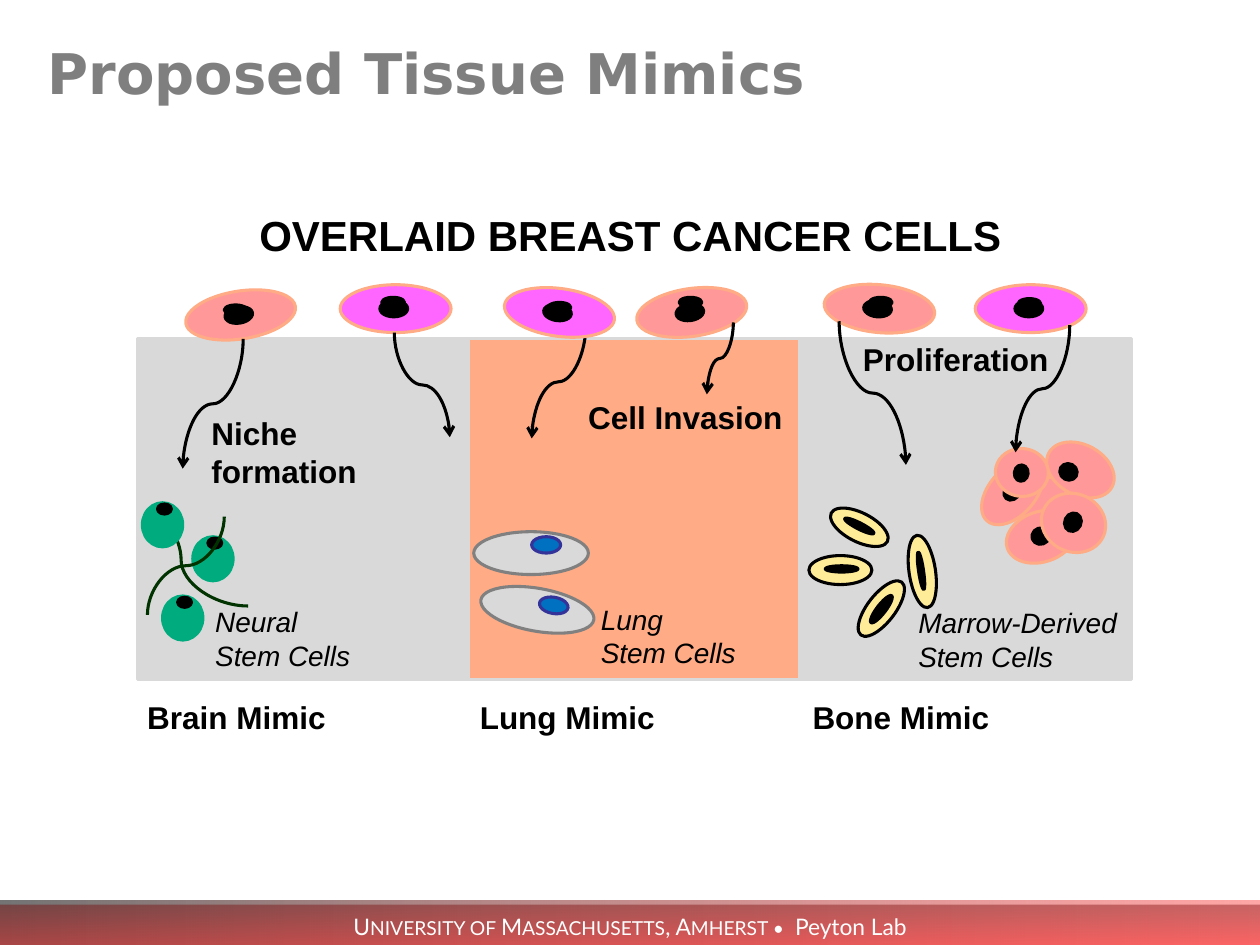
from lxml import etree
from pptx import Presentation
from pptx import util as u
from pptx.dml.color import RGBColor
from pptx.enum import shapes, text
from pptx.oxml.ns import qn

HUES = {
    "black": "000000", "white": "FFFFFF", "grey": "D9D9D9", "rim": "808080",
    "title": "7F7F7F", "peach": "FFAB85", "rose": "FF9999", "pink": "FF66FF",
    "cream": "FFEC99", "green": "00AB7E", "fibre": "003300", "blue": "0070C0",
    "navy": "333399", "red": "FF0000", "wine": "760000",
}
COLS, ROWS = 100, 75


def hue(name):
    return RGBColor.from_string(HUES[name])


class Board:
    font = "Arial"
    stroke = u.Pt(1.75)

    def __init__(self, deck):
        self.unit = deck.slide_width / COLS
        self.slide = deck.slides.add_slide(deck.slide_layouts[6])

    def span(self, *cells):
        return [u.Emu(round(c * self.unit)) for c in cells]

    def shape(self, kind, box, fill=None, line=None, turn=0):
        item = self.slide.shapes.add_shape(kind, *self.span(*box))
        item.shadow.inherit = False
        item.rotation = turn
        if fill:
            item.fill.solid()
            item.fill.fore_color.rgb = hue(fill)
        if line:
            item.line.color.rgb = hue(line)
            item.line.width = self.stroke
        else:
            item.line.fill.background()
        return item

    def panel(self, box, fill):
        self.shape(shapes.MSO_SHAPE.RECTANGLE, box, fill, "grey")

    def oval(self, box, fill, line, turn=0):
        self.shape(shapes.MSO_SHAPE.OVAL, box, fill, line, turn)

    def cell(self, box, core, fill, line, turn=0, ink="black", edge="black"):
        self.oval(box, fill, line, turn)
        x, y = box[:2]
        dx, dy, w, h = core
        self.oval((x + dx, y + dy, w, h), ink, edge, turn)

    def band(self, box, stops, angle):
        item = self.shape(shapes.MSO_SHAPE.RECTANGLE, box)
        item.fill.gradient()
        item.fill.gradient_angle = angle
        for stop, (name, share) in zip(item.fill.gradient_stops, stops):
            stop.color.rgb = hue(name)
        marks = item.element.spPr.findall(".//" + qn("a:srgbClr"))
        for mark, (name, share) in zip(marks, stops):
            etree.SubElement(mark, qn("a:alpha")).set("val", str(share * 1000))
        return item

    def curve(self, start, end, color, upright=True, head=False, bend=None):
        (x1, y1), (x2, y2) = start, end
        turn = 0
        if upright:
            side = 1 if x2 < x1 else -1
            cx, cy = (x1 + x2) / 2, (y1 + y2) / 2
            half, drop = side * (y2 - y1) / 2, side * (x1 - x2) / 2
            x1, y1, x2, y2 = cx - half, cy - drop, cx + half, cy + drop
            turn = 90 if side > 0 else 270
        item = self.slide.shapes.add_connector(
            shapes.MSO_CONNECTOR.CURVE, *self.span(x1, y1, x2, y2))
        item.line.color.rgb = hue(color)
        item.line.width = self.stroke
        props = item.element.spPr
        props.find(qn("a:xfrm")).set("rot", str(turn * 60000))
        if bend:
            guide = etree.SubElement(props.find(".//" + qn("a:avLst")), qn("a:gd"))
            guide.set("name", "adj1")
            guide.set("fmla", f"val {bend}")
        if head:
            etree.SubElement(props.find(qn("a:ln")), qn("a:tailEnd")).set("type", "arrow")
        etree.SubElement(props, qn("a:effectLst"))

    def label(self, box, words, size=18, bold=True, slant=False,
              color="black", font=None, anchor=text.MSO_ANCHOR.TOP):
        frame = self.slide.shapes.add_textbox(*self.span(*box)).text_frame
        frame.word_wrap = True
        frame.vertical_anchor = anchor
        frame.text = words
        for para in frame.paragraphs:
            style = para.font
            style.name = font or self.font
            style.size = u.Pt(size)
            style.bold, style.italic = bold, slant
            style.color.rgb = hue(color)

    def footer(self, box, runs):
        item = self.band(box, [("wine", 40), ("red", 40)], 270)
        frame = item.text_frame
        frame.vertical_anchor = text.MSO_ANCHOR.MIDDLE
        para = frame.paragraphs[0]
        para.alignment = text.PP_ALIGN.CENTER
        para.font.name = "Lato"
        para.font.color.rgb = hue("white")
        for words, size in runs:
            run = para.add_run()
            run.text = words
            run.font.size = u.Pt(size)


def main():
    deck = Presentation()
    deck.slide_width, deck.slide_height = u.Inches(10), u.Inches(7.5)
    board = Board(deck)

    board.band((0, 71.5, COLS, 3.5), [("black", 55), ("red", 35)], 0)
    board.footer((0, 71.8, COLS, 3.4), [
        ("U", 13), ("NIVERSITY OF ", 11), ("M", 13), ("ASSACHUSETTS", 11),
        (", A", 13), ("MHERST • ", 11), (" Peyton Lab", 13)])
    board.label((2.8, 0.8, 95.4, 8.1), "Proposed Tissue Mimics", 32,
                color="title", font="DejaVu Sans", anchor=text.MSO_ANCHOR.BOTTOM)

    for i, (organ, fill) in enumerate(
            [("Brain", "grey"), ("Lung", "peach"), ("Bone", "grey")]):
        left = 10.9 + 26.3 * i
        board.label((10.7 + 26.4 * i, 54.9, 18.5, 4), organ + " Mimic")
        board.panel((left, 26.9, 26.3, 27), fill)

    def cancer(x, y, fill, turn, spot):
        board.cell((x, y, 8.8, 3.8), (3.15, 1.25, 2.2, 1.3), fill, "peach", turn)
        board.oval((*spot, 1.8, 0.8), "black", "black")

    for spec_row in [
        (50.5, 22.9, "rose", 351.9, (53.9, 23.6)),
        (14.7, 23.1, "rose", 351.2, (17.8, 24.2)),
        (27, 22.6, "pink", 0, (30.3, 23.6)),
        (65.4, 22.6, "rose", 5.4, (69, 23.6)),
        (77.4, 22.6, "pink", 0, (80.8, 23.7)),
    ]:
        cancer(*spec_row)

    board.oval((80.6, 37.9, 5.7, 4), "rose", "peach", 5.4)
    for box, core, turn in [
        ((77.3, 37.2, 6.1, 3.7), (2.3, 1.2, 1.5, 1.2), 311.3),
        ((79.8, 40.6, 5.7, 4), (2.1, 1.3, 1.4, 1.3), 341.4),
        ((82.9, 35.3, 5.7, 4), (1.2, 1.5, 1.4, 1.3), 28.4),
        ((82.6, 39.2, 5.2, 4.6), (1.9, 1.5, 1.3, 1.5), 24.9),
        ((79, 35.6, 4.2, 3.8), (1.5, 1.3, 1.1, 1.3), 5.4),
    ]:
        board.cell(box, core, "rose", "peach", turn)

    for start, end in [
        ((19.3, 26.9), (14.5, 37.2)), ((31.3, 26.4), (35.7, 34.7)),
        ((58.2, 25.6), (56.1, 31.3)), ((46.5, 25.8), (42.2, 34.8)),
        ((66.6, 25.5), (71.9, 36.9)), ((84.9, 25.8), (80.6, 35.9)),
    ]:
        board.curve(start, end, "black", head=True)
    cancer(40, 22.9, "pink", 7.6, (43.5, 24))

    for box, core, turn in [
        ((64.2, 44.1, 5, 2.3), (1.3, 0.8, 2.6, 0.5), 0),
        ((65.7, 40.7, 5, 2.3), (1.2, 0.8, 2.6, 0.5), 26.9),
        ((67.3, 47.2, 5.3, 2.2), (1.3, 0.8, 2.7, 0.7), 307.6),
        ((70.3, 44.3, 5.8, 2.1), (1.3, 0.8, 3, 0.4), 261.6),
    ]:
        board.cell(box, core, "cream", "black", turn)

    board.curve((11.6, 40.8), (19.7, 48.1), "fibre", upright=False, bend=34300)
    for x, y in [(11.3, 39.9), (15.3, 42.6), (12.9, 47.3)]:
        board.cell((x, y, 3.2, 3.5), (1.2, 0.1, 1.1, 0.8), "green", "green")
    board.curve((17.8, 41), (11.7, 48.8), "fibre")

    for x, y, turn, dx, dy in [(37.6, 42.2, 0, 4.6, 0.4), (38.1, 46.7, 10.1, 4.7, 0.7)]:
        board.cell((x, y, 9.1, 3.4), (dx, dy, 2.3, 1.3), "grey", "rim",
                   turn, "blue", "navy")

    for x, y, w, kind in [(16.1, 47.5, 16, "Neural"), (46.7, 47.3, 19.1, "Lung"),
                          (71.9, 47.6, 19.7, "Marrow-Derived")]:
        board.label((x, y, w, 6.4), kind + "\nStem Cells", 16, False, True)

    board.label((19.6, 16.1, 61.1, 5), "OVERLAID BREAST CANCER CELLS", 24)
    board.label((15.8, 32.4, 17.8, 7.1), "Niche formation")
    board.label((45.7, 31.1, 18.5, 4), "Cell Invasion")
    board.label((67.5, 26.5, 18.1, 4), "Proliferation")

    deck.save("out.pptx")


if __name__ == "__main__":
    main()
